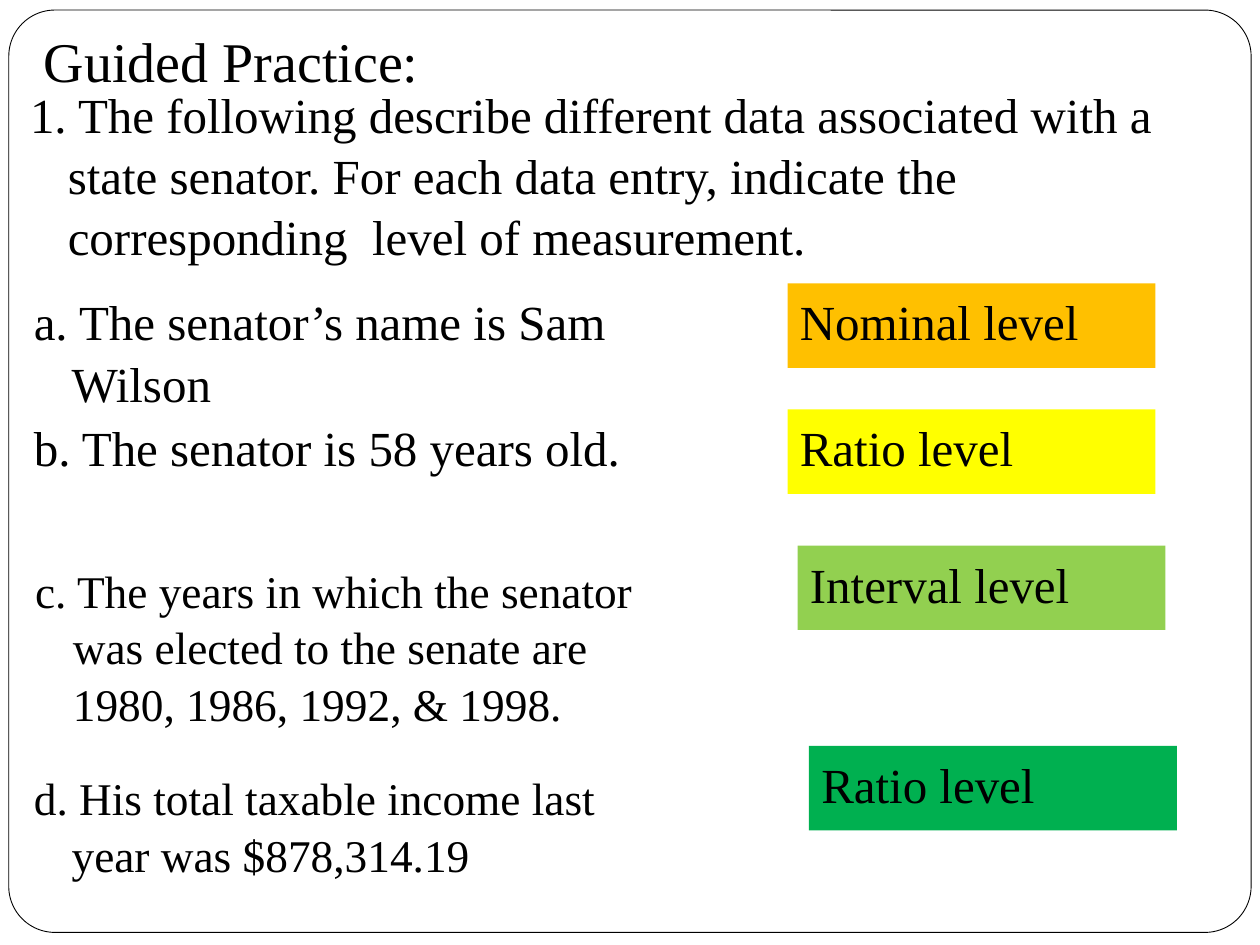
from pptx import Presentation
from pptx.dml.color import RGBColor
from pptx.enum.shapes import MSO_SHAPE
from pptx.enum.text import MSO_ANCHOR, PP_ALIGN
from pptx.util import Inches, Pt

COLORS = {
    "paper": "FFFFFF",
    "ink": "000000",
    "orange": "FFC000",
    "yellow": "FFFF00",
    "lime": "92D050",
    "green": "00B050",
}
FONT = "Times New Roman"
HANGING_INDENT = 0.3
ANSWER_SIZE = (2.92, 0.67)

HEADINGS = [
    ("Guided Practice:", (0.25, 0.14, 8.5, 0.58), 32),
    ("1. The following describe different data associated with a state senator. "
     "For each data entry, indicate the corresponding  level of measurement.",
     (0.14, 0.6, 9.5, 1.42), 28),
]
ENTRIES = [
    ("a. The senator’s name is Sam Wilson", (0.17, 2.25, 5.25, 0.67), 28),
    ("b. The senator is 58 years old.", (0.17, 3.25, 5.25, 0.67), 28),
    ("c. The years in which the senator was elected to the senate are "
     "1980, 1986, 1992, & 1998.", (0.18, 4.4, 5.25, 1.18), 25.9),
    ("d. His total taxable income last year was $878,314.19",
     (0.17, 6.05, 5.25, 0.87), 25.9),
]
ANSWERS = [
    ("Nominal level", (6.25, 2.25), "orange"),
    ("Ratio level", (6.25, 3.25), "yellow"),
    ("Interval level", (6.33, 4.33), "lime"),
    ("Ratio level", (6.42, 5.92), "green"),
]


def rgb(name):
    return RGBColor.from_string(COLORS[name])


def write_text(shape, text, size=28, color="ink"):
    """Fill the shape with one paragraph that has a hanging indent."""
    frame = shape.text_frame
    frame.word_wrap = True
    frame.vertical_anchor = MSO_ANCHOR.TOP
    paragraph = frame.paragraphs[0]
    paragraph.alignment = PP_ALIGN.LEFT
    paragraph.space_before = Pt(5.8)
    paragraph.line_spacing = 1.04
    properties = paragraph._p.get_or_add_pPr()
    properties.set("marL", str(Inches(HANGING_INDENT)))
    properties.set("indent", str(Inches(-HANGING_INDENT)))
    run = paragraph.add_run()
    run.text = text
    run.font.name = FONT
    run.font.size = Pt(size)
    run.font.color.rgb = rgb(color)


def add_panel(slide, kind, box, fill):
    panel = slide.shapes.add_shape(kind, *map(Inches, box))
    panel.shadow.inherit = False
    panel.fill.solid()
    panel.fill.fore_color.rgb = rgb(fill)
    panel.line.fill.background()
    return panel


def add_frame(slide):
    frame = add_panel(slide, MSO_SHAPE.ROUNDED_RECTANGLE,
                      (0.07, 0.08, 9.86, 7.32), "paper")
    frame.adjustments[0] = 0.05
    frame.line.color.rgb = rgb("ink")
    frame.line.width = Pt(0.5)


def add_passage(slide, text, box, size):
    passage = slide.shapes.add_textbox(*map(Inches, box))
    write_text(passage, text, size=size)


def add_answer(slide, text, corner, fill):
    answer = add_panel(slide, MSO_SHAPE.RECTANGLE, corner + ANSWER_SIZE, fill)
    write_text(answer, text)


def main():
    deck = Presentation()
    deck.slide_width, deck.slide_height = Inches(10), Inches(7.5)
    slide = deck.slides.add_slide(deck.slide_layouts[6])
    add_frame(slide)
    for passage in HEADINGS + ENTRIES:
        add_passage(slide, *passage)
    for answer in ANSWERS:
        add_answer(slide, *answer)
    deck.save("out.pptx")


if __name__ == "__main__":
    main()
